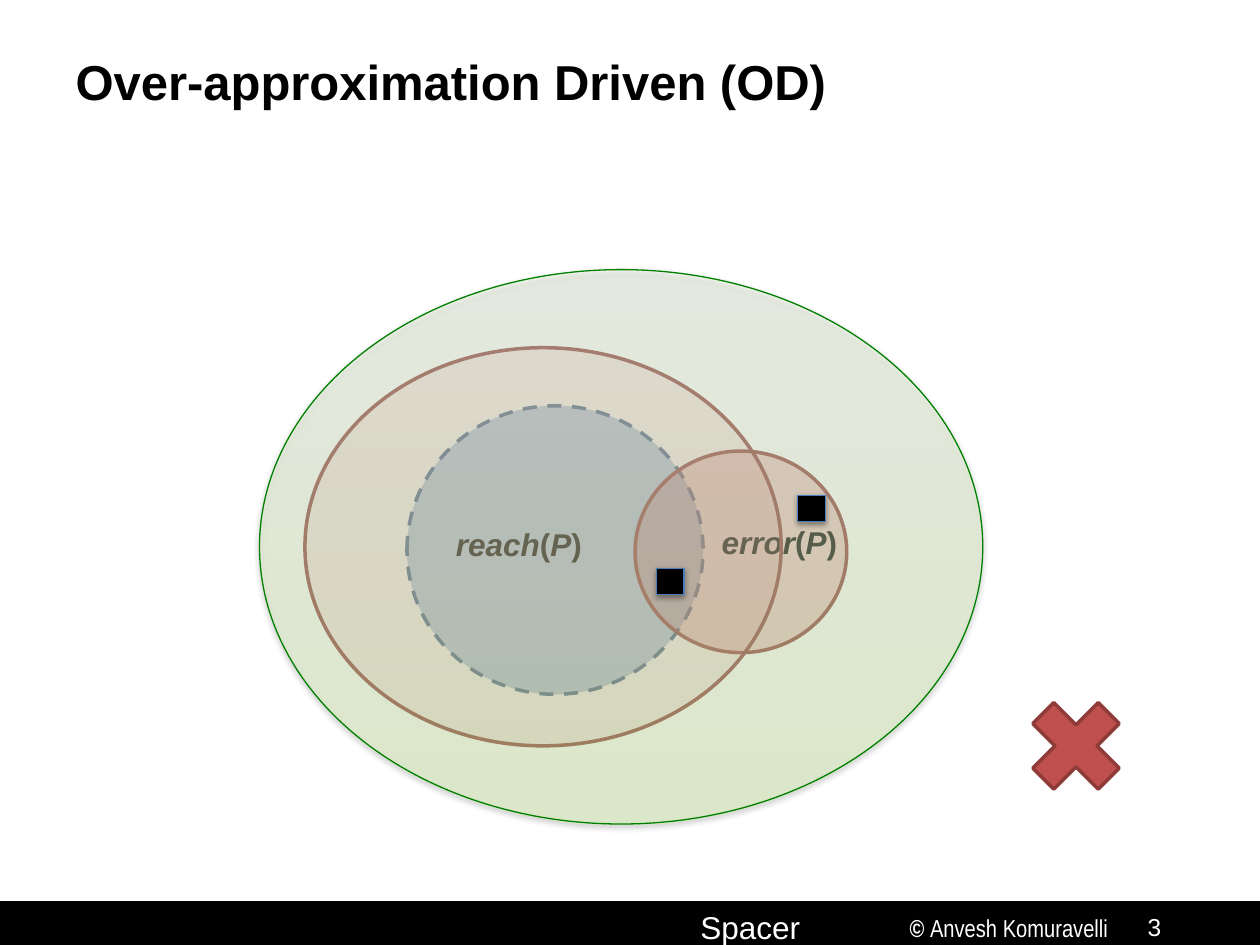
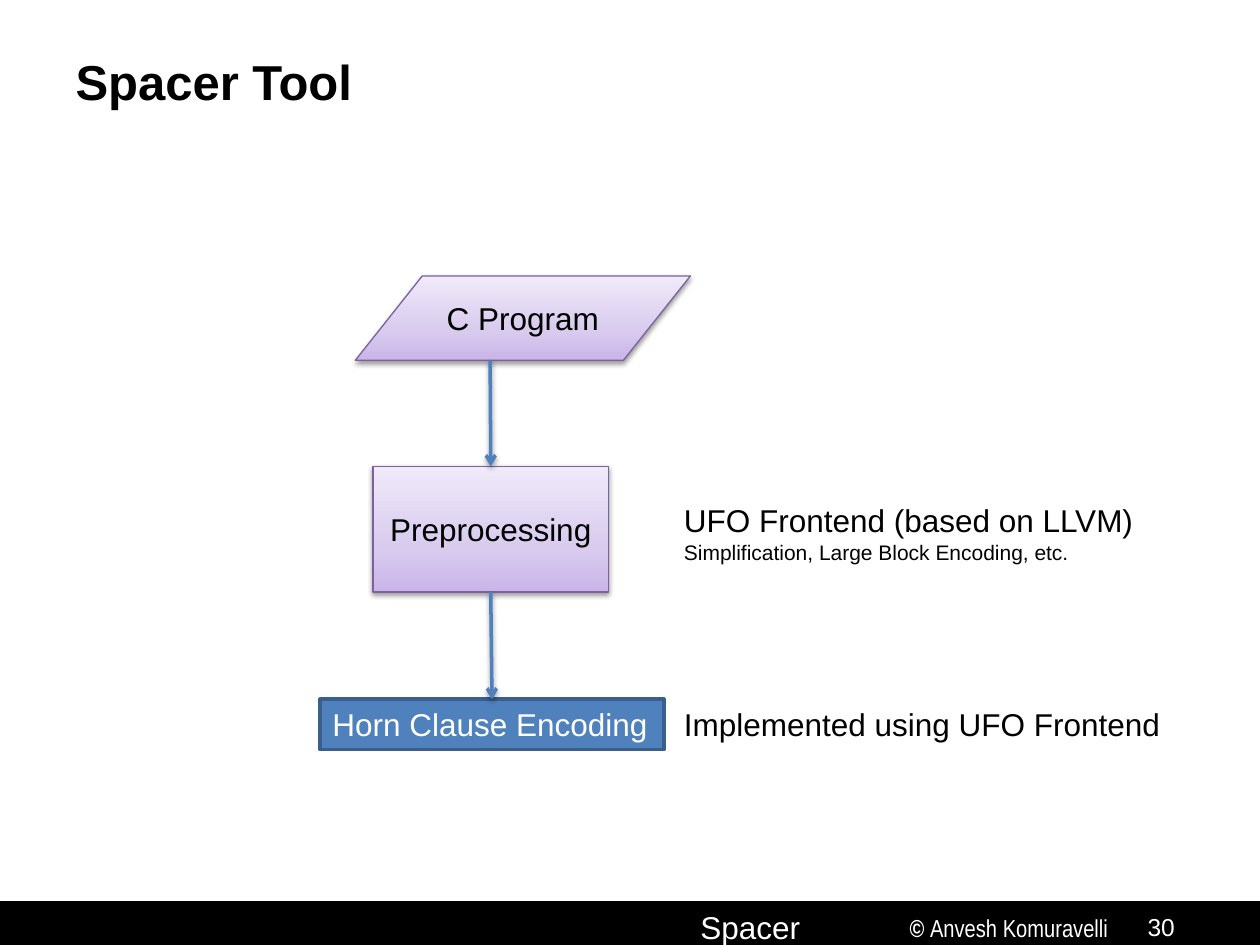
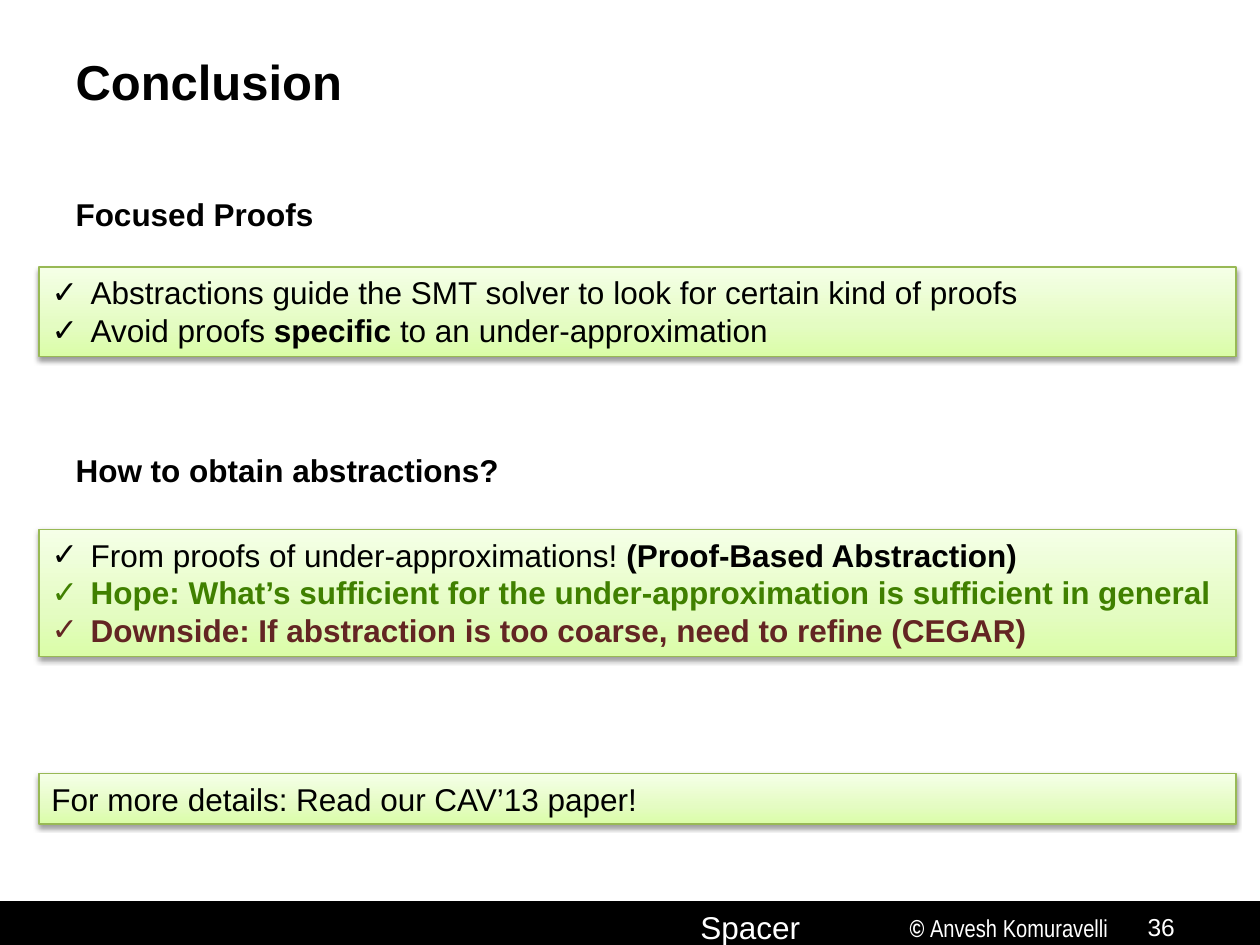
from lxml.etree import SubElement
from pptx import Presentation
from pptx.dml.color import RGBColor
from pptx.enum.dml import MSO_LINE
from pptx.enum.shapes import MSO_CONNECTOR, MSO_SHAPE
from pptx.enum.text import MSO_ANCHOR, MSO_AUTO_SIZE, PP_ALIGN
from pptx.oxml.ns import qn
from pptx.util import Inches, Pt

COLORS = {
    "black": "000000", "white": "FFFFFF",
    "blue": "4F81BD", "blue edge": "3A5F8C", "marker edge": "4B7EBC",
    "red": "C0504D", "red edge": "8E3B39",
    "green edge": "98B955", "safe edge": "008000", "purple edge": "7D60A0",
    "hope": "408000", "downside": "632523",
}
GRADIENTS = {
    "green": [(0, "DAFDA7"), (35, "E4FCC2"), (100, "F5FFE7")],
    "purple": [(0, "C9B5E8"), (35, "D8CBEE"), (100, "F0EAF9")],
}
BODY = {"name": "Arial", "size": Pt(18), "bold": False, "color": "black"}
HEADING = {**BODY, "bold": True}
LABEL = {"word_wrap": False, "auto_size": MSO_AUTO_SIZE.SHAPE_TO_FIT_TEXT}
CENTERED = {"vertical_anchor": MSO_ANCHOR.MIDDLE}


def paint(shape, fill, edge, width=0.75, opacity=100, shadow=False):
    """Set fill (None for a connector), line and shadow; gradients run bottom to top."""
    properties = shape.element.spPr
    if fill in GRADIENTS:
        shape.fill.gradient()
        shape.fill.gradient_angle = 90
        stops = properties.find(qn("a:gradFill")).find(qn("a:gsLst"))
        stops.clear()
        for position, color in GRADIENTS[fill]:
            stop = SubElement(stops, qn("a:gs"), pos=str(position * 1000))
            SubElement(stop, qn("a:srgbClr"), val=color)
    elif fill:
        shape.fill.solid()
        shape.fill.fore_color.rgb = RGBColor.from_string(COLORS[fill])
    if opacity < 100:
        for color in properties.iter(qn("a:srgbClr")):
            SubElement(color, qn("a:alpha"), val=str(opacity * 1000))
    shape.line.color.rgb = RGBColor.from_string(COLORS[edge])
    shape.line.width = Pt(width)
    effects = SubElement(properties, qn("a:effectLst"))
    if shadow:
        cast = SubElement(effects, qn("a:outerShdw"), blurRad=str(Pt(3.1)),
                          dist=str(Pt(1.6)), dir="5400000", rotWithShape="0")
        color = SubElement(cast, qn("a:srgbClr"), val=COLORS["black"])
        SubElement(color, qn("a:alpha"), val="38000")


def write(shape, paragraphs, style=BODY, frame={}, align=PP_ALIGN.LEFT, bullet=None):
    """Fill a shape with paragraphs, each a list of (text, font changes) runs."""
    text_frame = shape.text_frame
    settings = {"word_wrap": True, "auto_size": MSO_AUTO_SIZE.NONE,
                "vertical_anchor": MSO_ANCHOR.TOP, **frame}
    for name, value in settings.items():
        setattr(text_frame, name, value)
    for index, runs in enumerate(paragraphs):
        paragraph = text_frame.add_paragraph() if index else text_frame.paragraphs[0]
        paragraph.alignment = align
        paragraph.space_before = Pt(0)
        if bullet:
            layout = paragraph._p.get_or_add_pPr()
            layout.set("marL", str(Inches(0.31)))
            layout.set("indent", str(Inches(-0.31)))
            SubElement(layout, qn("a:buFont"), typeface="Arial")
            SubElement(layout, qn("a:buChar"), char=bullet)
        for text, changes in runs:
            run = paragraph.add_run()
            run.text = text
            for name, value in {**style, **changes}.items():
                if name == "color":
                    run.font.color.rgb = RGBColor.from_string(COLORS[value])
                else:
                    setattr(run.font, name, value)


presentation = Presentation()
presentation.slide_width, presentation.slide_height = Inches(10), Inches(7.5)

# Title and footer of every slide
slides = []
for title, number, layout_index in [("Over-approximation Driven (OD)", "3", 5),
                                    ("Spacer Tool", "30", 5),
                                    ("Conclusion", "36", 4)]:
    slide = presentation.slides.add_slide(presentation.slide_layouts[layout_index])
    slides.append(slide)
    heading = slide.shapes.title
    heading.left, heading.top, heading.width, heading.height = map(Inches, (0.5, 0.3, 9, 0.69))
    write(heading, [[(title, {})]], {**HEADING, "size": Pt(28)}, CENTERED)

    band = slide.shapes.add_shape(MSO_SHAPE.RECTANGLE, 0, Inches(7.16), Inches(10), Inches(0.34))
    paint(band, "black", "black")
    author = slide.shapes.add_shape(MSO_SHAPE.RECTANGLE, Inches(7.17), Inches(7.19),
                                    Inches(2.06), Inches(0.34))
    paint(author, "black", "black", 2)
    margins = {f"margin_{side}": Inches(0.05) for side in ("left", "top", "right", "bottom")}
    write(author, [[("© ", {"bold": True}), ("Anvesh Komuravelli", {})]],
          {"name": "Arial Narrow", "size": Pt(14), "bold": False, "color": "white"},
          {**CENTERED, **margins})
    tool_name = slide.shapes.add_textbox(Inches(5.46), Inches(7.16), Inches(1.52), Inches(0.4))
    write(tool_name, [[("Spacer", {"color": "white"})]], frame=LABEL)
    page = slide.shapes.add_shape(MSO_SHAPE.RECTANGLE, Inches(9.01), Inches(7.19),
                                  Inches(0.5), Inches(0.29))
    paint(page, "black", "black")
    write(page, [[(number, {})]], {**BODY, "size": Pt(14), "color": "white"})

over_approximation, tool, conclusion = slides

# Over-approximation Driven: nested state sets
shapes = over_approximation.shapes
for box, fill, edge, width, opacity, dashed, label in [
    ((3.23, 3.22, 2.35, 2.29), "blue", "blue edge", 2, 45, True, ("reach", 3.52, 4.12, 1.22)),
    ((5.04, 3.58, 1.68, 1.6), "red", "red edge", 2, 33, False, ("error", 5.63, 4.1, 1.14)),
    ((2.42, 2.76, 3.78, 3.16), "red", "red edge", 2, 16, False, None),
    ((2.06, 2.14, 5.74, 4.4), "green", "safe edge", 0.75, 36, False, None),
]:
    state_set = shapes.add_shape(MSO_SHAPE.OVAL, *map(Inches, box))
    paint(state_set, fill, edge, width, opacity, shadow=fill == "green")
    if dashed:
        state_set.line.dash_style = MSO_LINE.DASH
    if label:
        name, left, top, label_width = label
        set_name = shapes.add_textbox(Inches(left), Inches(top), Inches(label_width), Inches(0.4))
        write(set_name, [[(name, {"italic": True}), ("(", {}), ("P", {"italic": True}), (")", {})]],
              HEADING, LABEL)

for left, top in [(6.33, 3.93), (5.21, 4.51)]:
    state = shapes.add_shape(MSO_SHAPE.RECTANGLE, Inches(left), Inches(top),
                             Inches(0.22), Inches(0.21))
    paint(state, "black", "marker edge", shadow=True)

cross = shapes.add_shape(MSO_SHAPE.MATH_MULTIPLY, Inches(8.04), Inches(5.42), Inches(1), Inches(1))
paint(cross, "red", "red edge", 2)

# Spacer Tool: processing steps with remarks
shapes = tool.shapes
steps = []
for kind, box, text, fill, edge, width, color, frame in [
    (MSO_SHAPE.FLOWCHART_DATA, (2.82, 2.19, 2.66, 0.67), "C Program",
     "purple", "purple edge", 0.75, "black", CENTERED),
    (MSO_SHAPE.RECTANGLE, (2.96, 3.7, 1.87, 1), "Preprocessing",
     "purple", "purple edge", 0.75, "black", CENTERED),
    (MSO_SHAPE.RECTANGLE, (2.54, 5.55, 2.73, 0.4), "Horn Clause Encoding",
     "blue", "blue edge", 2, "white", LABEL),
]:
    step = shapes.add_shape(kind, *map(Inches, box))
    paint(step, fill, edge, width, shadow=fill == "purple")
    write(step, [[(text, {"color": color})]], frame=frame,
          align=PP_ALIGN.CENTER if frame is CENTERED else PP_ALIGN.LEFT)
    steps.append(step)

for box, lines in [
    ((5.33, 3.93, 3.8, 0.61), [[("UFO Frontend (based on LLVM)", {})],
                               [("Simplification, Large Block Encoding, etc.", {"size": Pt(12)})]]),
    ((5.33, 5.55, 4.02, 0.4), [[("Implemented using UFO Frontend", {})]]),
]:
    write(shapes.add_textbox(*map(Inches, box)), lines, frame=LABEL)

program, preprocessing, encoding = steps
for source, target in [(program, preprocessing), (preprocessing, encoding)]:
    arrow = shapes.add_connector(MSO_CONNECTOR.STRAIGHT, Inches(3.89), source.top + source.height,
                                 Inches(3.9), target.top)
    if source is preprocessing:
        arrow.begin_connect(source, 2)
    arrow.end_connect(target, 0)
    paint(arrow, None, "blue", 2, shadow=True)
    SubElement(arrow.line._get_or_add_ln(), qn("a:tailEnd"), type="arrow")

# Conclusion: headings and check lists
focus_heading, focus_list, source_heading, source_list = list(conclusion.placeholders)[1:]
for heading, text, top, width in [(focus_heading, "Focused Proofs", 1.5, 2.11),
                                  (source_heading, "How to obtain abstractions?", 3.53, 3.6)]:
    heading.left, heading.top, heading.width, heading.height = map(Inches, (0.5, top, width, 0.4))
    write(heading, [[(text, {})]], HEADING, LABEL)

details = conclusion.shapes.add_shape(MSO_SHAPE.RECTANGLE, 0, 0, Inches(1), Inches(1))
bold = {"bold": True}
for panel, top, height, bullet, lines in [
    (focus_list, 2.12, 0.71, "✓", [
        [("Abstractions guide the SMT solver to look for certain kind of proofs", {})],
        [("Avoid proofs ", {}), ("specific", bold), (" to an under-approximation", {})]]),
    (source_list, 4.2, 1.01, "✓", [
        [("From proofs of under-approximations! ", {}), ("(Proof-Based Abstraction)", bold)],
        [("Hope: What’s sufficient for the under-approximation is sufficient in general",
          {**bold, "color": "hope"})],
        [("Downside: If abstraction is too coarse, need to refine (CEGAR)",
          {**bold, "color": "downside"})]]),
    (details, 6.14, 0.4, None, [[("For more details: Read our CAV’13 paper!", {})]]),
]:
    panel.left, panel.top, panel.width, panel.height = map(Inches, (0.31, top, 9.5, height))
    paint(panel, "green", "green edge", shadow=True)
    write(panel, lines, bullet=bullet)

presentation.save("out.pptx")
